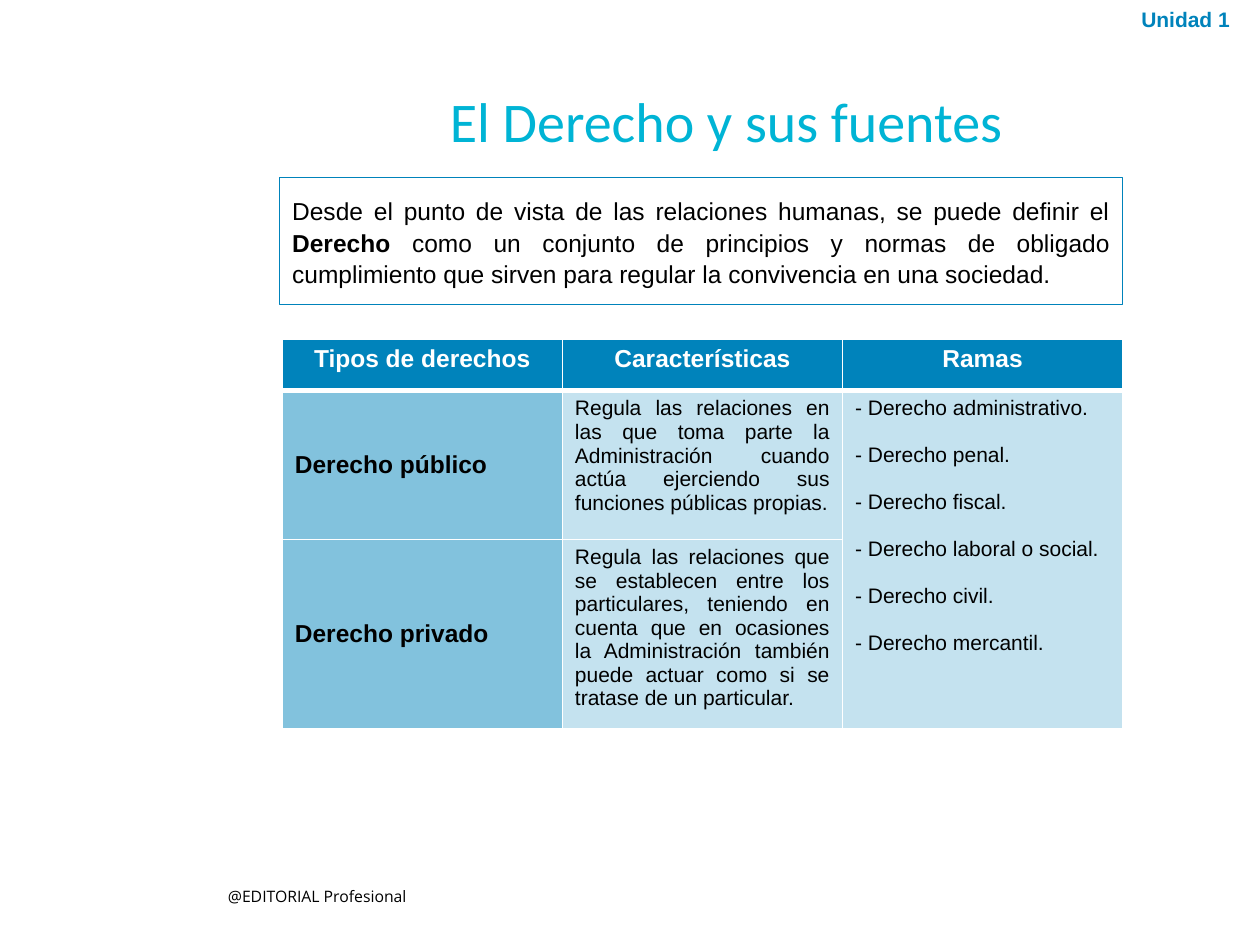
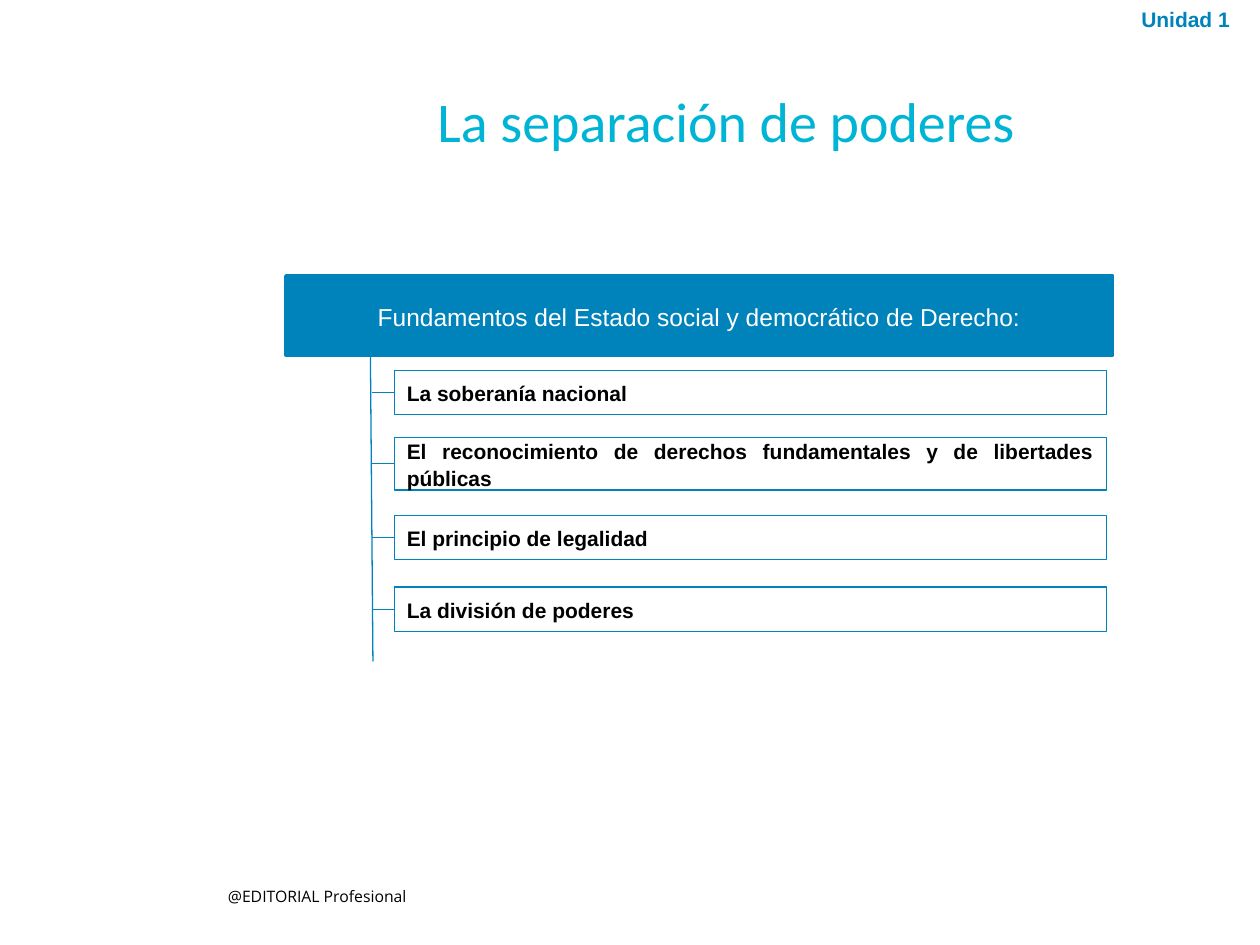
from dataclasses import dataclass

from lxml.etree import SubElement
from pptx import Presentation
from pptx.dml.color import RGBColor
from pptx.enum.shapes import MSO_CONNECTOR, MSO_SHAPE
from pptx.enum.text import MSO_ANCHOR, PP_ALIGN
from pptx.oxml import parse_xml
from pptx.oxml.ns import nsdecls, qn
from pptx.util import Inches, Pt

COLORS = {"blue": "0083BB", "cyan": "00B4D5", "black": "000000", "white": "FFFFFF"}
LEFT, CENTER, JUSTIFY = PP_ALIGN.LEFT, PP_ALIGN.CENTER, PP_ALIGN.JUSTIFY
TOP, MIDDLE = MSO_ANCHOR.TOP, MSO_ANCHOR.MIDDLE
BRANCH_START, BRANCH_END, PRINCIPLE_WIDTH = 2.95, 3.13, 5.65


@dataclass
class Area:
    """A rectangle in inches."""

    left: float
    top: float
    width: float
    height: float

    def lengths(self):
        """Return the four lengths for python-pptx."""
        return [Inches(value) for value in (self.left, self.top, self.width, self.height)]


@dataclass
class LawType:
    """A row of the table of law types."""

    name: str
    features: str


@dataclass
class Principle:
    """A boxed principle hanging from the trunk line."""

    text: str
    top: float
    height: float = 0.35
    align: PP_ALIGN = LEFT


LAW_HEADINGS = ["Tipos de derechos", "Características", "Ramas"]
LAW_TYPES = [
    LawType("Derecho público", "Regula las relaciones en las que toma parte la Administración "
            "cuando actúa ejerciendo sus funciones públicas propias."),
    LawType("Derecho privado", "Regula las relaciones que se establecen entre los particulares, "
            "teniendo en cuenta que en ocasiones la Administración también puede actuar "
            "como si se tratase de un particular."),
]
BRANCHES = ["administrativo", "penal", "fiscal", "laboral o social", "civil", "mercantil"]
DEFINITION = [
    ("Desde el punto de vista de las relaciones humanas, se puede definir el ", False),
    ("Derecho ", True),
    ("como un conjunto de principios y normas de obligado cumplimiento que sirven para "
     "regular la convivencia en una sociedad.", False),
]
PRINCIPLES = [
    Principle("La soberanía nacional", 2.94),
    Principle("El reconocimiento de derechos fundamentales y de libertades públicas",
              3.47, 0.42, JUSTIFY),
    Principle("El principio de legalidad", 4.09),
    Principle("La división de poderes", 4.66),
]


def color(name: str) -> RGBColor:
    """Look up a named colour."""
    return RGBColor.from_string(COLORS[name])


def write(frame, *paragraphs, size: float = 12, font: str = "Arial", ink: str = "black",
          bold: bool = False, align: PP_ALIGN = LEFT, spacing: float = 1.0,
          gap: float = 0) -> None:
    """Fill a text frame with paragraphs, each a string or a list of (text, bold) spans."""
    frame.word_wrap = True
    for index, content in enumerate(paragraphs):
        para = frame.add_paragraph() if index else frame.paragraphs[0]
        para.alignment = align
        para.line_spacing = spacing
        para.space_before = Pt(gap if index else 0)
        spans = [(content, bold)] if isinstance(content, str) else content
        for text, strong in spans:
            span = para.add_run()
            span.text = text
            span.font.size, span.font.name, span.font.bold = Pt(size), font, strong
            span.font.color.rgb = color(ink)


def add_text(page, area: Area, text: str, margin: bool = True,
             anchor: MSO_ANCHOR = TOP, **style) -> None:
    """Add a text box."""
    frame = page.shapes.add_textbox(*area.lengths()).text_frame
    frame.vertical_anchor = anchor
    if not margin:
        frame.margin_left = frame.margin_right = frame.margin_top = frame.margin_bottom = 0
    write(frame, text, **style)


def add_box(page, area: Area, content, fill: str = "", border: float = 0.75, **style):
    """Add a blue-edged rectangle with middle-anchored text."""
    box = page.shapes.add_shape(MSO_SHAPE.RECTANGLE, *area.lengths())
    box.shadow.inherit = False
    if fill:
        box.fill.solid()
        box.fill.fore_color.rgb = color(fill)
    else:
        box.fill.background()
    box.line.color.rgb = color("blue")
    box.line.width = Pt(border)
    box.text_frame.vertical_anchor = MIDDLE
    write(box.text_frame, content, spacing=1.07, **style)
    return box


def add_line(page, start: tuple[float, float], end: tuple[float, float]):
    """Add a thin blue straight line."""
    points = [Inches(value) for value in (*start, *end)]
    line = page.shapes.add_connector(MSO_CONNECTOR.STRAIGHT, *points)
    line.line.color.rgb = color("blue")
    line.line.width = Pt(0.75)
    SubElement(line._element.spPr, qn("a:effectLst"))
    return line


def style_cell(cell, opacity: int = 100, bottom: float = 1, top: float = 1) -> None:
    """Give a cell a blue fill of some opacity and white borders."""
    cell.fill.solid()
    cell.fill.fore_color.rgb = color("blue")
    properties = cell._tc.get_or_add_tcPr()
    if opacity < 100:
        tint = properties.find(".//" + qn("a:srgbClr"))
        SubElement(tint, qn("a:alpha"), val=str(opacity * 1000))
    edges = {"lnL": 1, "lnR": 1, "lnT": top, "lnB": bottom}
    for index, (edge, width) in enumerate(edges.items()):
        properties.insert(index, parse_xml(
            f'<a:{edge} {nsdecls("a")} w="{Pt(width)}"><a:solidFill>'
            f'<a:srgbClr val="{COLORS["white"]}"/></a:solidFill></a:{edge}>'))


def add_law_table(page) -> None:
    """Add the table of law types, features and branches."""
    heights = [0.41, 1.18, 1.4]
    area = Area(2.24, 2.69, 6.67, sum(heights))
    table = page.shapes.add_table(len(heights), len(LAW_HEADINGS), *area.lengths()).table
    for row, height in zip(table.rows, heights):
        row.height = Inches(height)
    for column, heading in enumerate(LAW_HEADINGS):
        cell = table.cell(0, column)
        style_cell(cell, bottom=3)
        write(cell.text_frame, heading, size=14, ink="white", bold=True, align=CENTER)
    for row, law in enumerate(LAW_TYPES, start=1):
        for column, opacity in enumerate([49, 23, 23]):
            style_cell(table.cell(row, column), opacity, top=3 if row == 1 else 1)
        name, features = table.cell(row, 0), table.cell(row, 1)
        name.vertical_anchor = MIDDLE
        write(name.text_frame, law.name, size=14, bold=True)
        write(features.text_frame, law.features, align=JUSTIFY)
    branches = table.cell(1, 2)
    branches.merge(table.cell(2, 2))
    write(branches.text_frame, *[f"- Derecho {branch}." for branch in BRANCHES], gap=13.4)


def add_page(deck, title: str):
    """Add a page with the shared footer, unit label and title."""
    page = deck.slides.add_slide(deck.slide_layouts[6])
    add_text(page, Area(1.71, 6.99, 1.92, 0.25), "@EDITORIAL Profesional",
             size=9, font="Open Sans")
    add_text(page, Area(8.96, 0, 1.04, 0.3), "Unidad 1", ink="blue", bold=True)
    add_text(page, Area(1.53, 0.68, 8.47, 0.54), title, margin=False, anchor=MIDDLE,
             size=32, font="Calibri", ink="cyan", align=CENTER)
    return page


def build_law_page(deck) -> None:
    """Build the page on law and its sources."""
    page = add_page(deck, "El Derecho y sus fuentes")
    add_box(page, Area(2.22, 1.41, 6.69, 1.01), DEFINITION, size=14, align=JUSTIFY)
    add_law_table(page)


def build_powers_page(deck) -> None:
    """Build the page on the separation of powers."""
    page = add_page(deck, "La separación de poderes")
    add_line(page, (2.94, 2.82), (2.96, 5.25))
    add_box(page, Area(2.27, 2.19, 6.56, 0.63),
            "Fundamentos del Estado social y democrático de Derecho:",
            fill="blue", border=2, size=14, ink="white", align=CENTER)
    for principle in PRINCIPLES:
        area = Area(BRANCH_END, principle.top, PRINCIPLE_WIDTH, principle.height)
        box = add_box(page, area, principle.text, bold=True, align=principle.align)
        middle = principle.top + principle.height / 2
        branch = add_line(page, (BRANCH_START, middle), (BRANCH_END, middle))
        branch.end_connect(box, 1)


def main() -> None:
    """Build and save the deck."""
    deck = Presentation()
    deck.slide_width, deck.slide_height = Inches(10), Inches(7.5)
    build_law_page(deck)
    build_powers_page(deck)
    deck.save("out.pptx")


if __name__ == "__main__":
    main()
